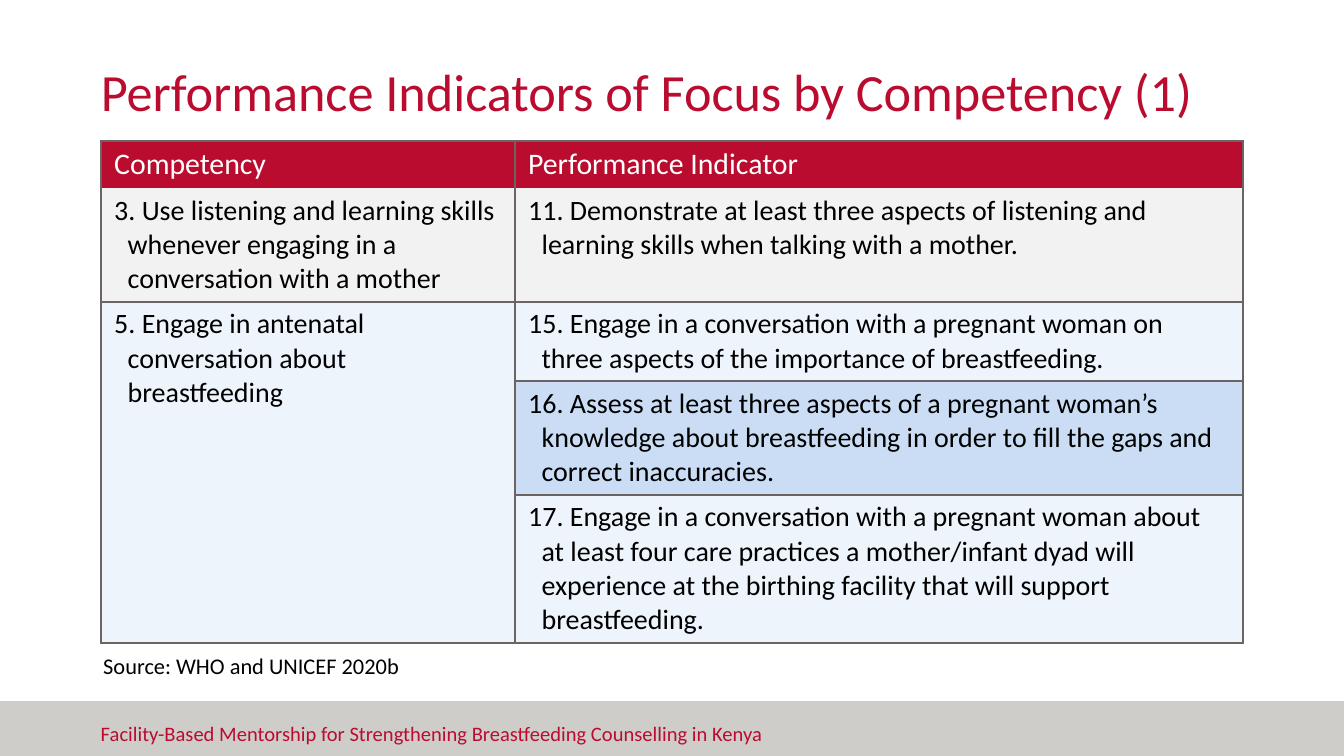
"""Build the slide of performance indicators by competency."""
from dataclasses import dataclass

from lxml import etree
from pptx import Presentation
from pptx.dml.color import RGBColor
from pptx.enum.shapes import MSO_SHAPE
from pptx.enum.text import MSO_ANCHOR, PP_ALIGN
from pptx.oxml.ns import qn
from pptx.util import Pt

RECT = MSO_SHAPE.RECTANGLE
BOTTOM = MSO_ANCHOR.BOTTOM
LEFT = PP_ALIGN.LEFT
FONT = "Calibri"
RED, BLACK, WHITE = "BA0C2F", "000000", "FFFFFF"
BAND, BORDER = "CFCDC9", "6C6463"
GREY, PALE, BLUE = "F2F2F2", "EDF4FB", "CADDF4"
COL_WIDTHS = (221.76, 390.24)


@dataclass
class Row:
    """One table row: height, fill and the text of both columns."""
    height: float
    fill: str
    competency: str
    indicator: str


@dataclass
class Label:
    """One text box with its place, size, colour and left inset."""
    text: str
    left: float
    top: float
    width: float
    height: float
    size: float
    color: str
    inset: float


ROWS = [
    Row(25.2, RED, "Competency", "Performance Indicator"),
    Row(60.5, GREY,
        "3. Use listening and learning skills whenever engaging in a conversation with a mother",
        "11. Demonstrate at least three aspects of listening and learning skills when talking "
        "with a mother."),
    Row(41.8, PALE, "5. Engage in antenatal conversation about breastfeeding",
        "15. Engage in a conversation with a pregnant woman on three aspects of the importance "
        "of breastfeeding."),
    Row(60.5, BLUE, "",
        "16. Assess at least three aspects of a pregnant woman’s knowledge about breastfeeding "
        "in order to fill the gaps and correct inaccuracies."),
    Row(78.8, PALE, "",
        "17. Engage in a conversation with a pregnant woman about at least four care practices "
        "a mother/infant dyad will experience at the birthing facility that will support "
        "breastfeeding."),
]
LABELS = [
    Label("Facility-Based Mentorship for Strengthening Breastfeeding Counselling in Kenya",
          54, 383, 378.7, 33.8, 11, RED, 0),
    Label("Source: WHO and UNICEF 2020b", 48.24, 345.6, 499.7, 21.6, 12, BLACK, 7.2),
]


def rgb(color: str) -> RGBColor:
    """Turn a hex string into a colour."""
    return RGBColor.from_string(color)


def style_text(tf, size: float, color: str) -> None:
    """Format every run of a text frame."""
    for p in tf.paragraphs:
        p.alignment = LEFT
        for r in p.runs:
            r.font.name = FONT
            r.font.size = Pt(size)
            r.font.bold = False
            r.font.color.rgb = rgb(color)


def set_insets(tf, left: float, top: float, right: float, bottom: float) -> None:
    """Set the four insets of a text frame."""
    tf.margin_left, tf.margin_top = Pt(left), Pt(top)
    tf.margin_right, tf.margin_bottom = Pt(right), Pt(bottom)


def add_band(slide) -> None:
    """Draw the footer band."""
    sp = slide.shapes.add_shape(RECT, 0, Pt(375.6), Pt(720), Pt(29.4))
    sp.shadow.inherit = False
    sp.fill.solid()
    sp.fill.fore_color.rgb = rgb(BAND)
    sp.line.fill.background()


def add_label(slide, label: Label) -> None:
    """Add one text box."""
    sp = slide.shapes.add_textbox(Pt(label.left), Pt(label.top), Pt(label.width), Pt(label.height))
    tf = sp.text_frame
    tf.word_wrap = True
    set_insets(tf, label.inset, 3.6, 7.2, 3.6)
    tf.text = label.text
    style_text(tf, label.size, label.color)


def set_title(slide, text: str) -> None:
    """Place and format the title placeholder."""
    sp = slide.shapes.title
    sp.left, sp.top, sp.width, sp.height = Pt(54), Pt(11.5), Pt(612), Pt(54)
    tf = sp.text_frame
    set_insets(tf, 0, 0, 0, 0)
    tf.vertical_anchor = BOTTOM
    tf.text = text
    style_text(tf, 28, RED)


def set_borders(cell, hidden: str) -> None:
    """Draw the cell borders, except the hidden edge."""
    tc_pr = cell._tc.get_or_add_tcPr()
    for edge in ("lnL", "lnR", "lnT", "lnB"):
        ln = etree.SubElement(tc_pr, qn(f"a:{edge}"), w=str(Pt(1)))
        if edge == hidden:
            etree.SubElement(ln, qn("a:noFill"))
        else:
            fill = etree.SubElement(ln, qn("a:solidFill"))
            etree.SubElement(fill, qn("a:srgbClr"), val=BORDER)


def fill_cell(cell, text: str, fill: str, row: int) -> None:
    """Write and format one table cell."""
    set_borders(cell, {0: "lnB", 1: "lnT"}.get(row, ""))
    cell.fill.solid()
    cell.fill.fore_color.rgb = rgb(fill)
    set_insets(cell, 7.2, 2.88, 7.2, 2.88)
    cell.text = text
    if row:
        p_pr = cell.text_frame.paragraphs[0]._p.get_or_add_pPr()
        p_pr.set("marL", str(Pt(7.2)))
        p_pr.set("indent", str(Pt(-7.2)))
    style_text(cell.text_frame, 15 if row else 16, BLACK if row else WHITE)


def add_indicators(slide, rows: list[Row]) -> None:
    """Add the table of competencies and indicators."""
    height = sum(row.height for row in rows)
    table = slide.shapes.add_table(
        len(rows), len(COL_WIDTHS), Pt(54), Pt(75.6), Pt(sum(COL_WIDTHS)), Pt(height)).table
    for col, width in zip(table.columns, COL_WIDTHS):
        col.width = Pt(width)
    for i, row in enumerate(rows):
        table.rows[i].height = Pt(row.height)
        fill_cell(table.cell(i, 0), row.competency, row.fill, i)
        fill_cell(table.cell(i, 1), row.indicator, row.fill, i)
    table.cell(2, 0).merge(table.cell(4, 0))


def main() -> None:
    """Build and save the slide."""
    prs = Presentation()
    prs.slide_width, prs.slide_height = Pt(720), Pt(405)
    slide = prs.slides.add_slide(prs.slide_layouts[5])
    add_band(slide)
    set_title(slide, "Performance Indicators of Focus by Competency (1)")
    add_indicators(slide, ROWS)
    for label in LABELS:
        add_label(slide, label)
    prs.save("out.pptx")


if __name__ == "__main__":
    main()
